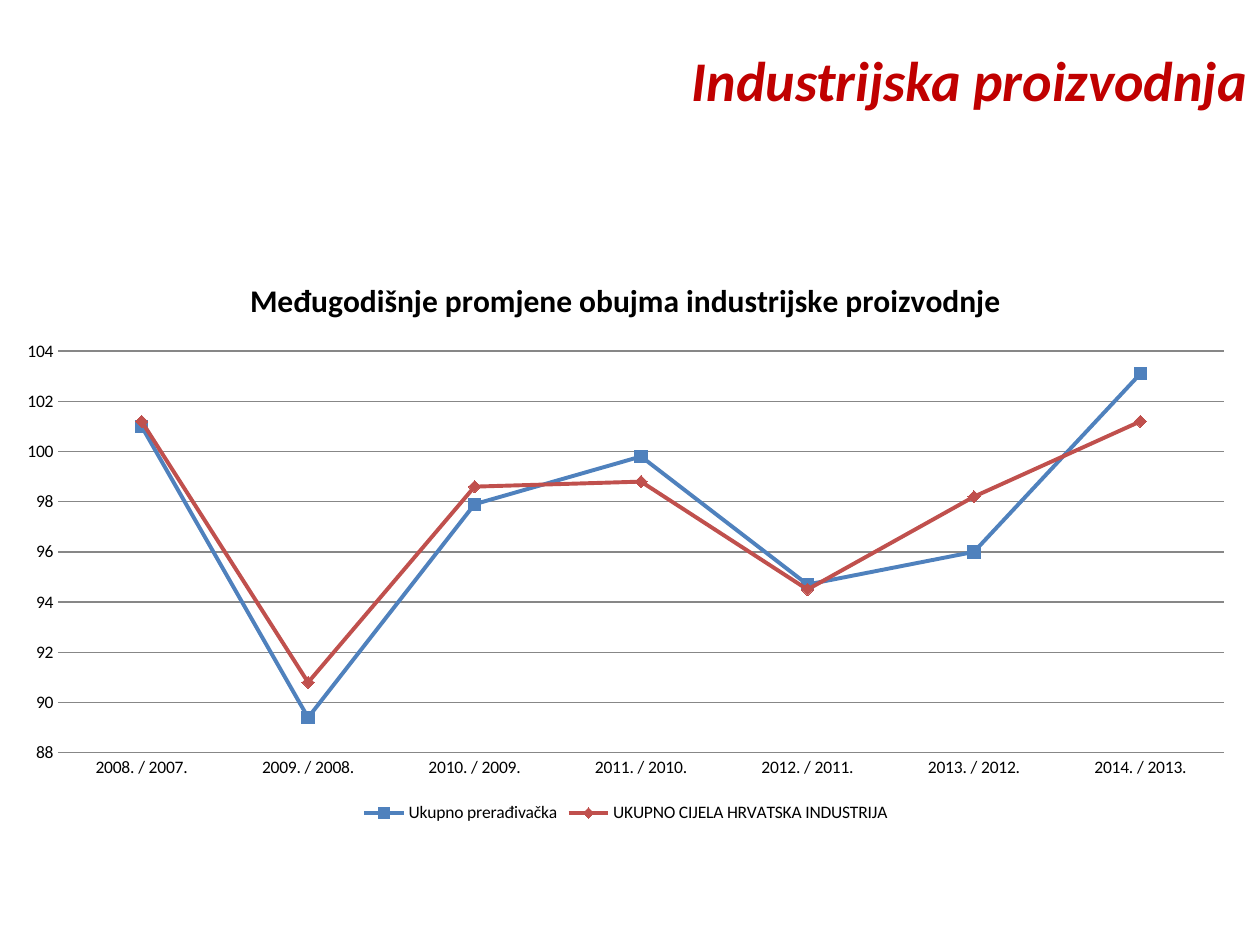
"""Builds a slide with a line chart of yearly changes in industrial production."""
from pptx import Presentation
from pptx.chart.data import CategoryChartData
from pptx.dml.color import RGBColor
from pptx.enum.chart import XL_CHART_TYPE, XL_LEGEND_POSITION, XL_MARKER_STYLE, XL_TICK_MARK
from pptx.enum.text import MSO_ANCHOR, PP_ALIGN
from pptx.util import Inches, Pt

LINE_MARKERS = XL_CHART_TYPE.LINE_MARKERS
BOTTOM = XL_LEGEND_POSITION.BOTTOM
SQUARE, DIAMOND = XL_MARKER_STYLE.SQUARE, XL_MARKER_STYLE.DIAMOND
NO_TICK = XL_TICK_MARK.NONE
TOP, RIGHT = MSO_ANCHOR.TOP, PP_ALIGN.RIGHT

FONT = "Calibri"
GRID = "878787"
TITLE = "Industrijska proizvodnja"
CHART_TITLE = "Međugodišnje promjene obujma industrijske proizvodnje"
TITLE_AREA = (1, 0.31, 9, 1.25)
CHART_AREA = (0.02, 2.02, 9.89, 4.55)
YEARS = range(2008, 2015)
SERIES = [
    ("Ukupno prerađivačka", "4F81BD", SQUARE,
     (101, 89.4, 97.9, 99.8, 94.7, 96, 103.1)),
    ("UKUPNO CIJELA HRVATSKA INDUSTRIJA", "C0504D", DIAMOND,
     (101.2, 90.8, 98.6, 98.8, 94.5, 98.2, 101.2)),
]


def color(value):
    return RGBColor.from_string(value)


def write(frame, text, size, fill="000000", bold=False, italic=False, align=None):
    para = frame.paragraphs[0]
    if align is not None:
        para.alignment = align
    span = para.add_run()
    span.text = text
    font = span.font
    font.name, font.size, font.bold, font.italic = FONT, Pt(size), bold, italic
    font.color.rgb = color(fill)


def add_title(page):
    frame = page.shapes.add_textbox(*map(Inches, TITLE_AREA)).text_frame
    frame.word_wrap = True
    frame.vertical_anchor = TOP
    write(frame, TITLE, 32, fill="C00000", bold=True, italic=True, align=RIGHT)


def style_line(line, fill, width):
    line.color.rgb = color(fill)
    line.width = Pt(width)


def style_axes(chart):
    values, categories = chart.value_axis, chart.category_axis
    for axis in (values, categories):
        axis.major_tick_mark = axis.minor_tick_mark = NO_TICK
    values.minimum_scale, values.maximum_scale, values.major_unit = 88, 104, 2
    values.tick_labels.number_format = "General"
    values.tick_labels.number_format_is_linked = False
    values.format.line.fill.background()
    values.has_major_gridlines = True
    style_line(values.major_gridlines.format.line, GRID, 0.75)
    style_line(categories.format.line, GRID, 0.75)


def add_chart(page):
    data = CategoryChartData()
    data.categories = [f"{year}. / {year - 1}." for year in YEARS]
    for name, _, _, values in SERIES:
        data.add_series(name, values)
    chart = page.shapes.add_chart(LINE_MARKERS, *map(Inches, CHART_AREA), data).chart
    chart.font.name, chart.font.size = FONT, Pt(10)
    chart.font.color.rgb = color("000000")
    chart.has_title = True
    write(chart.chart_title.text_frame, CHART_TITLE, 18, bold=True)
    chart.chart_title.include_in_layout = False
    chart.has_legend = True
    chart.legend.position = BOTTOM
    chart.legend.include_in_layout = False
    style_axes(chart)
    chart.plots[0].vary_by_categories = False
    for series, (_, fill, marker, _) in zip(chart.plots[0].series, SERIES):
        series.smooth = False
        style_line(series.format.line, fill, 2.25)
        series.marker.style, series.marker.size = marker, 7
        series.marker.format.fill.solid()
        series.marker.format.fill.fore_color.rgb = color(fill)
        style_line(series.marker.format.line, fill, 0.75)


def main():
    deck = Presentation()
    deck.slide_width, deck.slide_height = Inches(10), Inches(7.5)
    page = deck.slides.add_slide(deck.slide_layouts[6])
    add_chart(page)
    add_title(page)
    deck.save("out.pptx")


if __name__ == "__main__":
    main()
